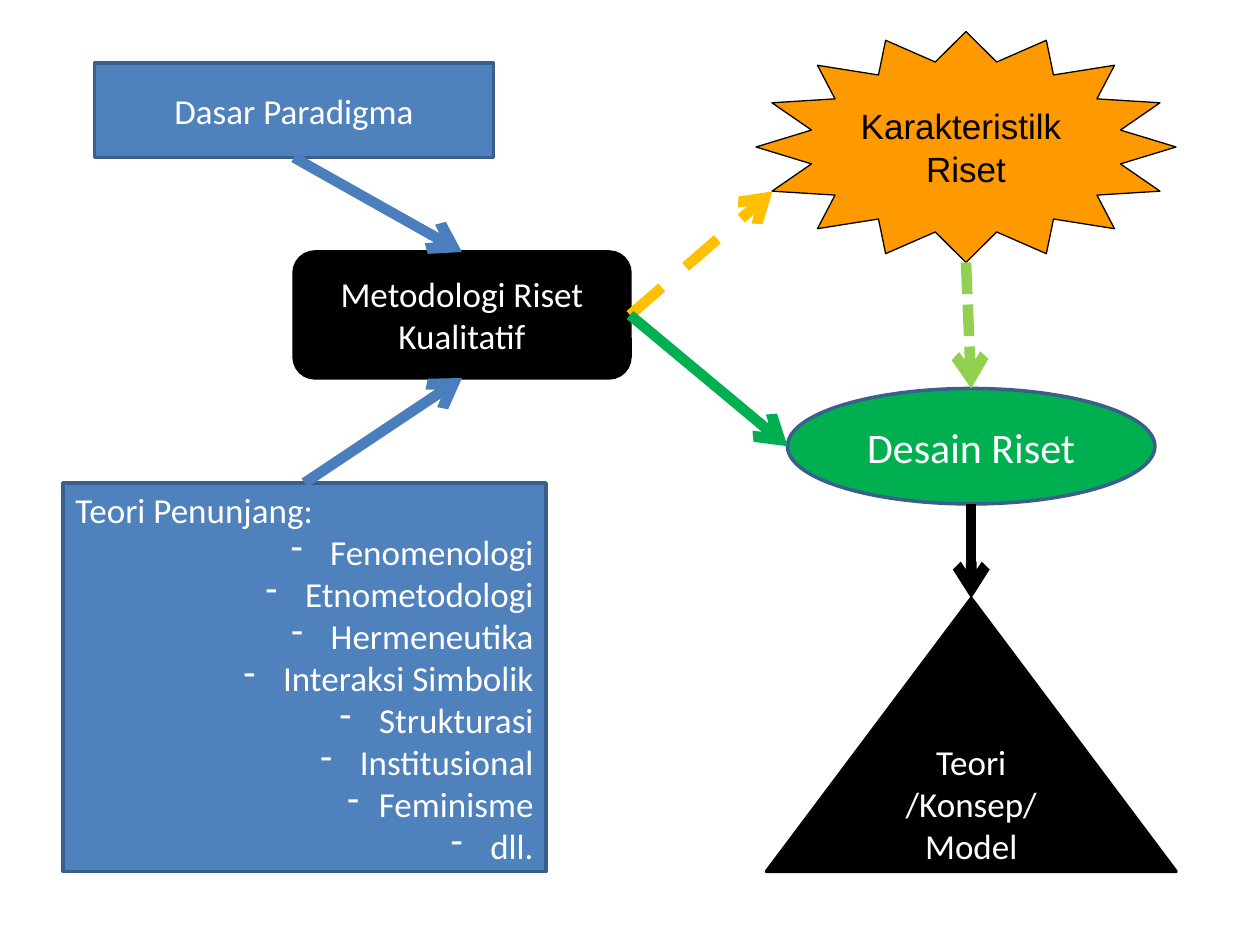
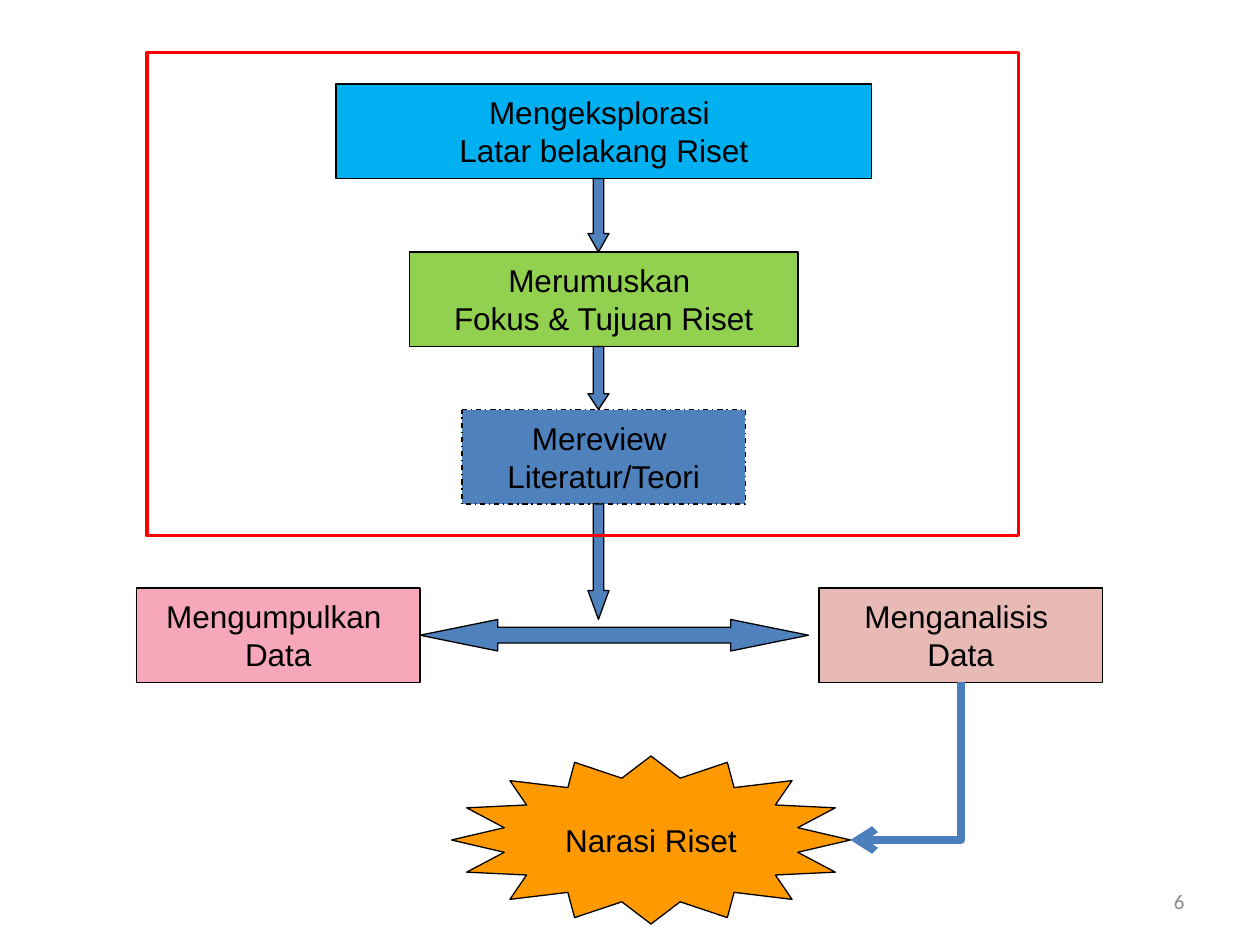
from dataclasses import dataclass
from lxml.etree import SubElement
from pptx import Presentation
from pptx.dml.color import RGBColor
from pptx.enum.dml import MSO_LINE
from pptx.enum.shapes import MSO_CONNECTOR, MSO_SHAPE
from pptx.enum.text import MSO_ANCHOR, PP_ALIGN
from pptx.oxml.ns import qn
from pptx.util import Pt


@dataclass(frozen=True)
class Theme:
    blue: str = "4F81BD"
    edge: str = "3A5F8C"
    link: str = "4B7EBC"
    black: str = "000000"
    white: str = "FFFFFF"
    orange: str = "FF9900"
    gold: str = "FFC000"
    green: str = "00B050"
    lime: str = "92D050"
    sky: str = "00B0F0"
    pink: str = "F7A7BA"
    rose: str = "E8BAB6"
    red: str = "FF0000"
    grey: str = "8C8C8C"
    sans: str = "Calibri"
    plain: str = "Arial"
    large: int = 24
    main: int = 20
    step: int = 18
    small: int = 12
    thick: float = 2
    thin: float = 0.75


look = Theme()


def draw(slide, kind, at, fill, edge, width, lines=(), font=look.sans,
         size=look.main, ink=look.white, wrap=True):
    """Add a preset shape with one centred paragraph per line of text."""
    shape = slide.shapes.add_shape(kind, *map(Pt, at))
    shape.shadow.inherit = False
    if fill:
        shape.fill.solid()
        shape.fill.fore_color.rgb = RGBColor.from_string(fill)
    else:
        shape.fill.background()
    shape.line.color.rgb = RGBColor.from_string(edge)
    shape.line.width = Pt(width)
    frame = shape.text_frame
    frame.word_wrap = wrap
    frame.vertical_anchor = MSO_ANCHOR.MIDDLE
    for i, line in enumerate(lines):
        para = frame.add_paragraph() if i else frame.paragraphs[0]
        para.alignment = PP_ALIGN.CENTER
        run = para.add_run()
        run.text = line
        run.font.name = font
        run.font.size = Pt(size)
        run.font.color.rgb = RGBColor.from_string(ink)
    return shape


def join(slide, kind, start, end, tone, width=6, dash=None):
    """Add a connector with an open arrowhead at its end."""
    link = slide.shapes.add_connector(kind, *map(Pt, start + end))
    link.line.color.rgb = RGBColor.from_string(tone)
    link.line.width = Pt(width)
    if dash:
        link.line.dash_style = dash
    props = link._element.spPr
    SubElement(props.find(qn("a:ln")), qn("a:tailEnd"), type="arrow")
    SubElement(props, qn("a:effectLst"))
    return link


deck = Presentation()
deck.slide_width, deck.slide_height = Pt(720), Pt(540)
blank = deck.slide_layouts[6]

# Slide 1: map of the research method
slide = deck.slides.add_slide(blank)
base = draw(slide, MSO_SHAPE.RECTANGLE, (54, 36, 228, 54), look.blue,
            look.edge, look.thick, ["Dasar Paradigma"])
method = draw(slide, MSO_SHAPE.ROUNDED_RECTANGLE, (168, 144, 192, 72),
              look.black, look.black, look.thick,
              ["Metodologi Riset Kualitatif"])
model = draw(slide, MSO_SHAPE.ISOSCELES_TRIANGLE, (438, 342, 234, 156),
             look.black, look.black, look.thick, ["Teori /Konsep/", "Model"])
theory = draw(slide, MSO_SHAPE.RECTANGLE, (36, 276, 276, 222), look.blue,
              look.edge, look.thick,
              ["Teori Penunjang:", " Fenomenologi", " Etnometodologi",
               " Hermeneutika", " Interaksi Simbolik", " Strukturasi",
               " Institusional", "Feminisme", " dll."])
head, *items = theory.text_frame.paragraphs
head.alignment = PP_ALIGN.LEFT
for item in items:
    item.alignment = PP_ALIGN.RIGHT
    props = item._p.get_or_add_pPr()
    props.set("marL", str(Pt(18)))
    props.set("indent", str(-Pt(18)))
    SubElement(props, qn("a:buChar"), char="-")
trait = draw(slide, MSO_SHAPE.STAR_16_POINT, (432, 18, 240, 132), look.orange,
             look.black, look.thin, ["Karakteristilk ", "Riset"],
             look.plain, ink=look.black, wrap=False)
design = draw(slide, MSO_SHAPE.OVAL, (450, 222, 210, 66), look.green,
              look.edge, look.thick, ["Desain Riset"], size=look.large)

# Each link: start, end, colour, dash, joined start side, joined end side
links = [
    ((168, 90), (264, 144), look.link, None, (base, 2), (method, 0)),
    ((174, 276), (264, 216), look.link, None, (theory, 0), (method, 2)),
    ((360, 180), (441.4, 109.4), look.gold, MSO_LINE.DASH, (method, 3), None),
    ((360, 180), (450, 255), look.green, None, (method, 3), None),
    ((552, 150), (555, 222), look.lime, MSO_LINE.SQUARE_DOT, None, (design, 0)),
    ((555, 288), (555, 342), look.black, None, None, (model, 0)),
]
for start, end, tone, dash, source, goal in links:
    link = join(slide, MSO_CONNECTOR.STRAIGHT, start, end, tone, dash=dash)
    if source:
        link.begin_connect(*source)
    if goal:
        link.end_connect(*goal)

# Slide 2: steps of the research
slide = deck.slides.add_slide(blank)
page = slide.shapes.add_textbox(Pt(516), Pt(500.4), Pt(168), Pt(28.8))
page.text_frame.word_wrap = True
page.text_frame.vertical_anchor = MSO_ANCHOR.MIDDLE
para = page.text_frame.paragraphs[0]
para.alignment = PP_ALIGN.RIGHT
run = para.add_run()
run.text = "6"
run.font.name = look.sans
run.font.size = Pt(look.small)
run.font.color.rgb = RGBColor.from_string(look.grey)

steps = [
    (192, 48, 306, look.sky, ["Mengeksplorasi ", "Latar belakang Riset"]),
    (234, 144, 222, look.lime, ["Merumuskan ", "Fokus & Tujuan Riset"]),
    (264, 234, 162, look.blue, ["Mereview ", "Literatur/Teori"]),
    (78, 336, 162, look.pink, ["Mengumpulkan ", "Data"]),
    (468, 336, 162, look.rose, ["Menganalisis ", "Data"]),
]
for left, top, width, fill, lines in steps:
    box = draw(slide, MSO_SHAPE.FLOWCHART_PROCESS, (left, top, width, 54),
               fill, look.black, look.thin, lines, look.plain, look.step,
               look.black, wrap=False)
    if fill == look.blue:
        box.line.dash_style = MSO_LINE.DASH_DOT

# Arrowheads take a quarter of each down arrow, a fifth of the wide one
for top, height in [(102, 42), (198, 36), (288, 66)]:
    down = draw(slide, MSO_SHAPE.DOWN_ARROW, (336, top, 12, height),
                look.blue, look.black, look.thin)
    down.adjustments[1] = height / 4 / 12
both = draw(slide, MSO_SHAPE.LEFT_RIGHT_ARROW, (240, 354, 222, 18),
            look.blue, look.black, look.thin)
both.adjustments[1] = 222 / 5 / 18

draw(slide, MSO_SHAPE.STAR_16_POINT, (258, 432, 228, 96), look.orange,
     look.black, look.thin, ["Narasi Riset"], look.plain, look.step,
     look.black, wrap=False)
draw(slide, MSO_SHAPE.RECTANGLE, (84, 30, 498, 276), None, look.red,
     look.thick)

# A quarter turn makes the elbow run down, then left
elbow = join(slide, MSO_CONNECTOR.ELBOW, (472.5, 403.5), (562.5, 466.5),
             look.link, 4.5)
shell = elbow._element.spPr
shell.find(qn("a:prstGeom")).set("prst", "bentConnector2")
shell.find(qn("a:xfrm")).set("rot", str(90 * 60000))

deck.save("out.pptx")
